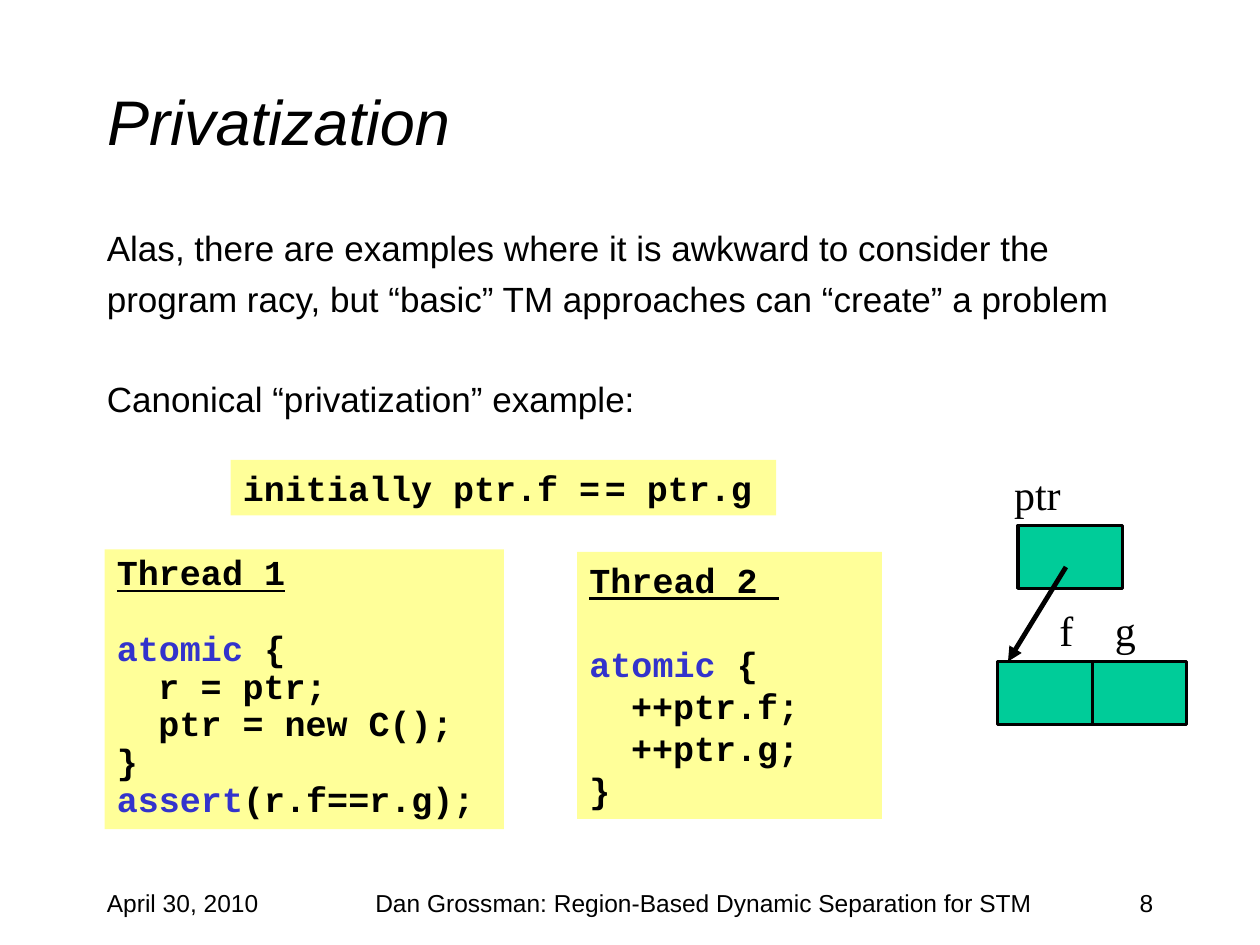
from lxml.etree import SubElement
from pptx import Presentation
from pptx.dml.color import RGBColor
from pptx.enum.shapes import MSO_CONNECTOR, MSO_SHAPE
from pptx.enum.text import MSO_ANCHOR, PP_ALIGN
from pptx.oxml.ns import qn
from pptx.util import Inches, Pt

THEME = {
    "text": RGBColor(0, 0, 0), "keyword": RGBColor(0x33, 0x33, 0xCC),
    "code_fill": RGBColor(0xFF, 0xFF, 0x99), "cell_fill": RGBColor(0, 0xCC, 0x99),
    "sans": "Arial", "mono": "Courier New", "serif": "Times New Roman",
    "title": 36, "body": 20, "code": 20, "thin_gap": 4, "footer": 14, "label": 24,
    "cell_line": 1.75, "arrow_line": 2.75,
}
TITLE = "Privatization"
BODY = [  # text, points of space before
    ("Alas, there are examples where it is awkward to consider the", 5),
    ("program racy, but “basic” TM approaches can “create” a problem", 5),
    ("Canonical “privatization” example:", 33),
]
FOOTER = [  # text, left, width, alignment
    ("April 30, 2010", 0.75, 2.08, PP_ALIGN.LEFT),
    ("Dan Grossman: Region-Based Dynamic Separation for STM", 2.67, 5.83, PP_ALIGN.CENTER),
    ("8", 7.17, 2.08, PP_ALIGN.RIGHT),
]
# Code lines are (indent level, [(text, style), ...])
ATOMIC = (0, [("atomic ", "keyword"), ("{", "")])
CLOSE = (0, [("}", "")])
CODE = [  # box, line spacing, points before the second line, lines
    ((0.83, 4.36, 3.17, 2.22), 0.9, 21.5, [
        (0, [("Thread 1", "heading")]), ATOMIC,
        (1, [("r = ptr;", "")]), (1, [("ptr = new C();", "")]), CLOSE,
        (0, [("assert", "keyword"), ("(r.f==r.g);", "")])]),
    ((4.58, 4.38, 2.42, 2.12), 1.0, 24, [
        (0, [("Thread 2 ", "heading")]), ATOMIC,
        (1, [("++ptr.f;", "")]), (1, [("++ptr.g;", "")]), CLOSE]),
    ((1.83, 3.65, 4.33, 0.44), 1.0, 0, [
        (0, [("initially ptr.f =", ""), (" ", "thin"), ("= ptr.g", "")])]),
]
CODE_INDENT = 0.33
POINTER_CELL = (8.08, 4.17, 0.83, 0.5)
FIELD_CELLS = [(7.92, 5.25, 0.83, 0.5), (8.67, 5.25, 0.75, 0.5)]
ARROW = (8.46, 4.5, 8, 5.25)
LABELS = [("ptr", (7.95, 3.67, 0.59, 0.5)), ("f", (8.31, 4.75, 0.29, 0.5)),
          ("g", (8.75, 4.75, 0.39, 0.5))]


def inches(box):
    return [Inches(v) for v in box]


def style(r, font, size, color="text", bold=False):
    r.font.name, r.font.size, r.font.bold = THEME[font], Pt(THEME[size]), bold
    r.font.color.rgb = THEME[color]


def add_text(s, text, box, font, size, align=PP_ALIGN.LEFT, wrap=True):
    tf = s.shapes.add_textbox(*inches(box)).text_frame
    tf.word_wrap = wrap
    tf.text = text
    for p in tf.paragraphs:
        p.alignment = align
        style(p.runs[0], font, size)
    return tf


def add_rect(s, box, fill):
    sp = s.shapes.add_shape(MSO_SHAPE.RECTANGLE, *inches(box))
    sp.shadow.inherit = False
    sp.fill.solid()
    sp.fill.fore_color.rgb = THEME[fill]
    return sp


def add_code(s, box, spacing, gap, lines):
    sp = add_rect(s, box, "code_fill")
    sp.line.fill.background()
    tf = sp.text_frame
    tf.word_wrap, tf.vertical_anchor = True, MSO_ANCHOR.TOP
    tf.text = "\n".join("" for _ in lines)
    for i, (p, (level, parts)) in enumerate(zip(tf.paragraphs, lines)):
        p.alignment, p.line_spacing = PP_ALIGN.LEFT, spacing
        p.space_before = Pt(gap if i == 1 else 0)
        if level:
            p._p.get_or_add_pPr().set("marL", str(Inches(CODE_INDENT * level)))
        for text, kind in parts:
            r = p.add_run()
            r.text = text
            style(r, "mono", "thin_gap" if kind == "thin" else "code",
                  "keyword" if kind == "keyword" else "text", True)
            r.font.underline = kind == "heading"


def add_cell(s, box):
    sp = add_rect(s, box, "cell_fill")
    sp.line.color.rgb = THEME["text"]
    sp.line.width = Pt(THEME["cell_line"])


def add_arrow(s, ends):
    c = s.shapes.add_connector(MSO_CONNECTOR.STRAIGHT, *inches(ends))
    c.line.color.rgb = THEME["text"]
    c.line.width = Pt(THEME["arrow_line"])
    SubElement(c.line._get_or_add_ln(), qn("a:tailEnd"), type="triangle")
    SubElement(c._element.spPr, qn("a:effectLst"))


def main():
    prs = Presentation()
    prs.slide_width, prs.slide_height = Inches(10), Inches(7.5)
    s = prs.slides.add_slide(prs.slide_layouts[5])

    title = s.shapes.title
    title.left, title.top, title.width, title.height = inches((0.75, 0.33, 8.5, 1.25))
    tf = title.text_frame
    tf.text, tf.vertical_anchor = TITLE, MSO_ANCHOR.MIDDLE
    p = tf.paragraphs[0]
    p.alignment = PP_ALIGN.LEFT
    style(p.runs[0], "sans", "title")
    p.runs[0].font.italic = True

    tf = add_text(s, "\n".join(text for text, _ in BODY), (0.75, 1.75, 8.67, 1.67),
                  "sans", "body")
    for p, (_, before) in zip(tf.paragraphs, BODY):
        p.space_before = Pt(before)
    for text, left, width, align in FOOTER:
        add_text(s, text, (left, 7, width, 0.5), "sans", "footer", align)

    for block in CODE:
        add_code(s, *block)
    add_cell(s, POINTER_CELL)
    add_arrow(s, ARROW)
    for box in FIELD_CELLS:
        add_cell(s, box)
    for text, box in LABELS:
        add_text(s, text, box, "serif", "label", wrap=False)
    prs.save("out.pptx")


if __name__ == "__main__":
    main()
